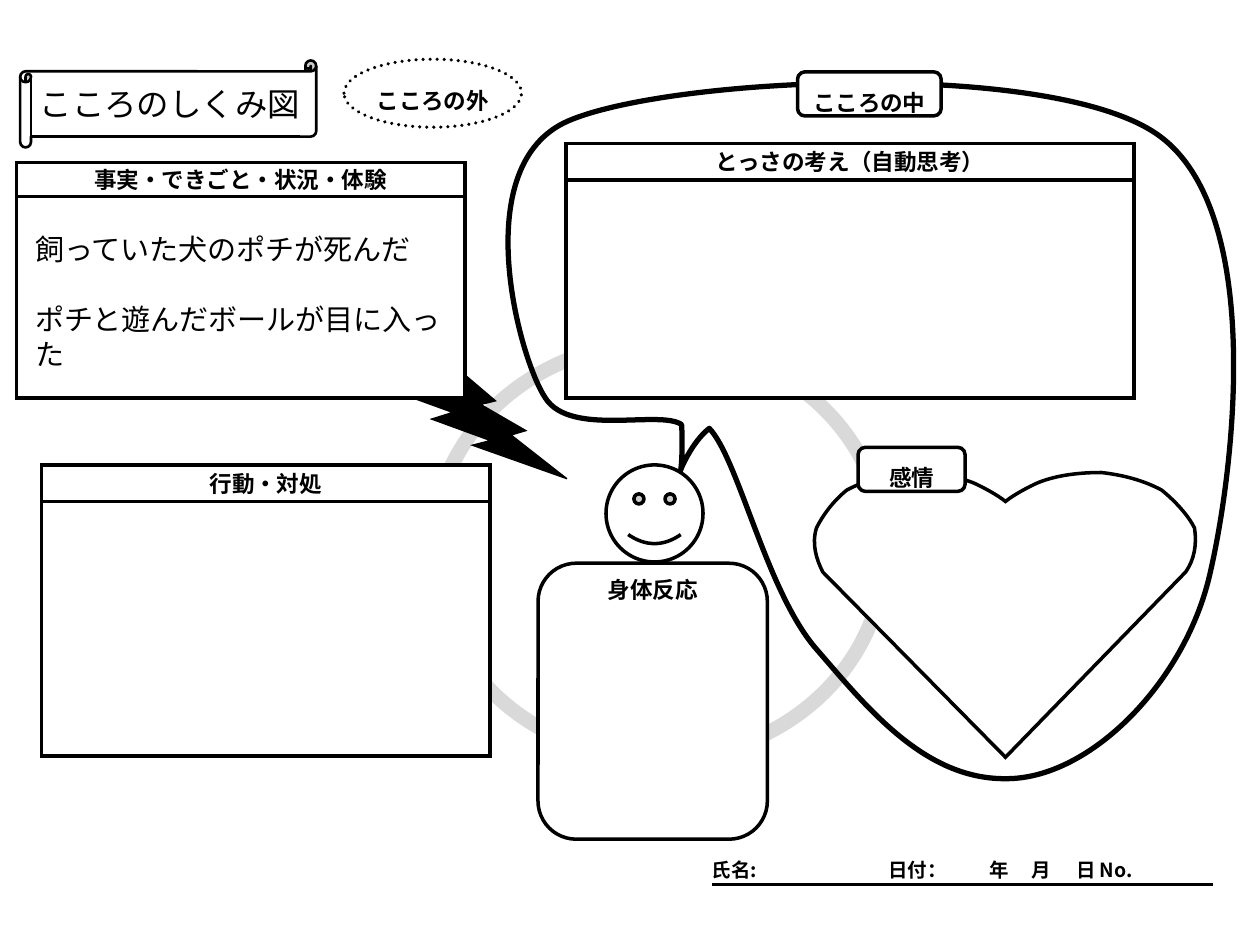
from lxml.etree import SubElement
from pptx import Presentation
from pptx.dml.color import RGBColor
from pptx.enum.dml import MSO_LINE
from pptx.enum.shapes import MSO_CONNECTOR, MSO_SHAPE as Preset
from pptx.enum.text import MSO_ANCHOR as Anchor, PP_ALIGN as Align
from pptx.oxml.ns import qn
from pptx.util import Inches, Pt

BLACK = RGBColor(0, 0, 0)
WHITE = RGBColor(255, 255, 255)
GREY = RGBColor(0xD9, 0xD9, 0xD9)
JAPANESE, LATIN = "Noto Sans CJK JP", "Calibri"
TEXT_INSETS = (0.07, 0.01, 0.07, 0.01)

# title, left, top, width, header height, body height
THOUGHTS = ("とっさの考え（自動思考）", 4.49, 1.14, 4.51, 0.29, 1.73)
FACTS = ("事実・できごと・状況・体験", 0.13, 1.29, 3.56, 0.27, 1.6)
ACTIONS = ("行動・対処", 0.33, 3.69, 3.56, 0.29, 2.02)
BADGES = [("感情", (6.81, 3.55, 0.85, 0.35)), ("こころの中", (6.33, 0.57, 1.14, 0.35))]
EVENTS = ["飼っていた犬のポチが死んだ", "ポチと遊んだボールが目に入った"]
FORM_FIELDS = ["氏名:", "日付：", "年", "月", "日 No."]
FORM_TABS = [1.4, 2.2, 2.54, 2.89]

# Outlines: a start point, then steps of one point (line) or three (curve)
MIND_BOX = (4.03, 0.66, 5.76, 5.52)
MIND = [
    ((5.41, 3.37),),
    ((5.24, 3.25), (4.53, 3.47), (4.33, 3.16)),
    ((4.12, 2.85), (3.7, 1.31), (4.51, 0.96)),
    ((5.32, 0.61), (8.34, 0.47), (9.19, 1.07)),
    ((10.04, 1.67), (9.8, 3.72), (9.6, 4.57)),
    ((9.4, 5.42), (8.65, 6.18), (7.99, 6.18)),
    ((7.33, 6.19), (6.87, 5.6), (6.47, 5.14)),
    ((6.08, 4.68), (5.86, 3.64), (5.63, 3.4)),
    ((5.49, 3.51), (5.4, 3.73), (5.4, 3.74)),
    ((5.41, 3.73), (5.42, 3.52), (5.41, 3.37)),
]
HEART_BOX = (6.44, 3.75, 3.05, 2.25)
HEART = [
    ((7.98, 3.98),),
    ((7.92, 3.93), (7.79, 3.86), (7.72, 3.83)),
    ((7.56, 3.77), (7.39, 3.75), (7.21, 3.75)),
    ((7.03, 3.77), (6.87, 3.81), (6.72, 3.89)),
    ((6.61, 3.98), (6.53, 4.09), (6.48, 4.19)),
    ((6.44, 4.32), (6.48, 4.44), (6.53, 4.54)),
    ((7.98, 6.01),),
    ((9.41, 4.54),),
    ((9.48, 4.44), (9.5, 4.32), (9.48, 4.19)),
    ((9.43, 4.09), (9.33, 3.98), (9.22, 3.89)),
    ((9.07, 3.81), (8.91, 3.77), (8.74, 3.75)),
    ((8.57, 3.75), (8.39, 3.77), (8.24, 3.83)),
    ((8.17, 3.86), (8.04, 3.93), (7.98, 3.98)),
]

prs = Presentation()
prs.slide_width, prs.slide_height = Inches(10), Inches(7.5)
shapes = prs.slides.add_slide(prs.slide_layouts[6]).shapes


def style(shape, fill=WHITE, line=2, sharp=False):
    shape.shadow.inherit = False
    if fill is None:
        shape.fill.background()
    else:
        shape.fill.solid()
        shape.fill.fore_color.rgb = fill
    if line:
        shape.line.color.rgb = BLACK
        shape.line.width = Pt(line)
    else:
        shape.line.fill.background()
    if sharp:
        SubElement(shape.line._get_or_add_ln(), qn("a:miter"), lim="800000")
    return shape


def add_preset(preset, box, adjust=None, **look):
    shape = shapes.add_shape(preset, *map(Inches, box))
    if adjust is not None:
        shape.adjustments[0] = adjust
    return style(shape, **look)


def write(shape, paragraphs, size=12.9, bold=True, font=JAPANESE, align=Align.CENTER,
          anchor=Anchor.MIDDLE, insets=TEXT_INSETS, spacing=None, gap=0):
    frame = shape.text_frame
    frame.word_wrap, frame.vertical_anchor = True, anchor
    for side, inset in zip(("left", "top", "right", "bottom"), insets):
        setattr(frame, f"margin_{side}", Inches(inset))
    for i, text in enumerate(paragraphs):
        paragraph = frame.add_paragraph() if i else frame.paragraphs[0]
        paragraph.alignment = align
        if spacing:
            paragraph.line_spacing = spacing
        if i and gap:
            paragraph.space_before = Pt(gap)
        run = paragraph.add_run()
        run.text = text
        for name, value in {"size": Pt(size), "bold": bold, "name": font}.items():
            setattr(run.font, name, value)
        run.font.color.rgb = BLACK
        if font == JAPANESE:
            SubElement(run.font._element, qn("a:ea"), typeface=font)


def add_outline(box, steps, **look):
    """Freeform over the box, its frame swapped for true Bézier curves."""
    left, top, width, height = map(Inches, box)
    right, bottom = left + width, top + height
    builder = shapes.build_freeform(left, top)
    builder.add_line_segments([(right, top), (right, bottom), (left, bottom)])
    shape = builder.convert_to_shape()
    outline = next(shape._element.iter(qn("a:path")))
    for segment in list(outline):
        outline.remove(segment)
    for i, points in enumerate(steps):
        tag = "a:cubicBezTo" if len(points) == 3 else "a:lnTo" if i else "a:moveTo"
        segment = SubElement(outline, qn(tag))
        for x, y in points:
            SubElement(segment, qn("a:pt"), x=str(Inches(x) - left), y=str(Inches(y) - top))
    SubElement(outline, qn("a:close"))
    return style(shape, **look)


def add_panel(title, left, top, width, header, body, header_fill=WHITE):
    add_preset(Preset.RECTANGLE, (left, top + header, width, body), sharp=True)
    heading = add_preset(Preset.RECTANGLE, (left, top, width, header),
                         fill=header_fill, sharp=True)
    write(heading, [title])


# Background ring, mind bubble and title
add_preset(Preset.DONUT, (3.37, 2.66, 3.71, 3.42), adjust=0.034, fill=GREY, line=None)
add_outline(MIND_BOX, MIND, fill=None, line=3)
outside = add_preset(Preset.OVAL, (2.73, 0.47, 1.41, 0.54))
outside.line.dash_style = MSO_LINE.ROUND_DOT
outside.line._get_or_add_ln().set("cap", "rnd")
write(outside, ["こころの外"], anchor=Anchor.TOP, insets=(0.04, 0.01, 0.04, 0.01), spacing=1.6)
add_preset(Preset.SMILEY_FACE, (4.81, 3.69, 0.77, 0.77))
scroll = add_preset(Preset.HORIZONTAL_SCROLL, (0.16, 0.48, 2.35, 0.69), line=1.5)
write(scroll, ["こころのしくみ図"], size=18.5, bold=False, align=Align.JUSTIFY)

# Thoughts, heart, body and lightning
add_panel(*THOUGHTS, header_fill=None)
add_outline(HEART_BOX, HEART, sharp=True)
body = add_preset(Preset.ROUNDED_RECTANGLE, (4.27, 4.47, 1.82, 2.19))
write(body, ["身体反応"], anchor=Anchor.TOP)
add_preset(Preset.LIGHTNING_BOLT, (3.1, 2.94, 1.4, 0.86), fill=BLACK, line=0.75, sharp=True)

# Name and date form
rule = shapes.add_connector(MSO_CONNECTOR.STRAIGHT, *map(Inches, (5.65, 7.02, 9.63, 7.02)))
rule.line.color.rgb, rule.line.width = BLACK, Pt(2)
SubElement(rule._element.spPr, qn("a:effectLst"))
form = shapes.add_textbox(*map(Inches, (5.58, 6.8, 4.04, 0.23)))
write(form, ["\t".join(FORM_FIELDS)], size=11.1, align=Align.JUSTIFY, anchor=Anchor.TOP)
tabs = SubElement(form.text_frame.paragraphs[0]._p.get_or_add_pPr(), qn("a:tabLst"))
for position in FORM_TABS:
    SubElement(tabs, qn("a:tab"), pos=str(Inches(position)), algn="l")

# Facts, badges and actions
add_panel(*FACTS)
for label, box in BADGES:
    write(add_preset(Preset.ROUNDED_RECTANGLE, box), [label], spacing=1.6)
add_panel(*ACTIONS)
events = shapes.add_textbox(*map(Inches, (0.18, 1.79, 3.44, 1.22)))
write(events, EVENTS, size=16.6, bold=False, font=LATIN, align=Align.LEFT,
      anchor=Anchor.TOP, insets=(0.1, 0.05, 0.1, 0.05), gap=20)

prs.save("out.pptx")
